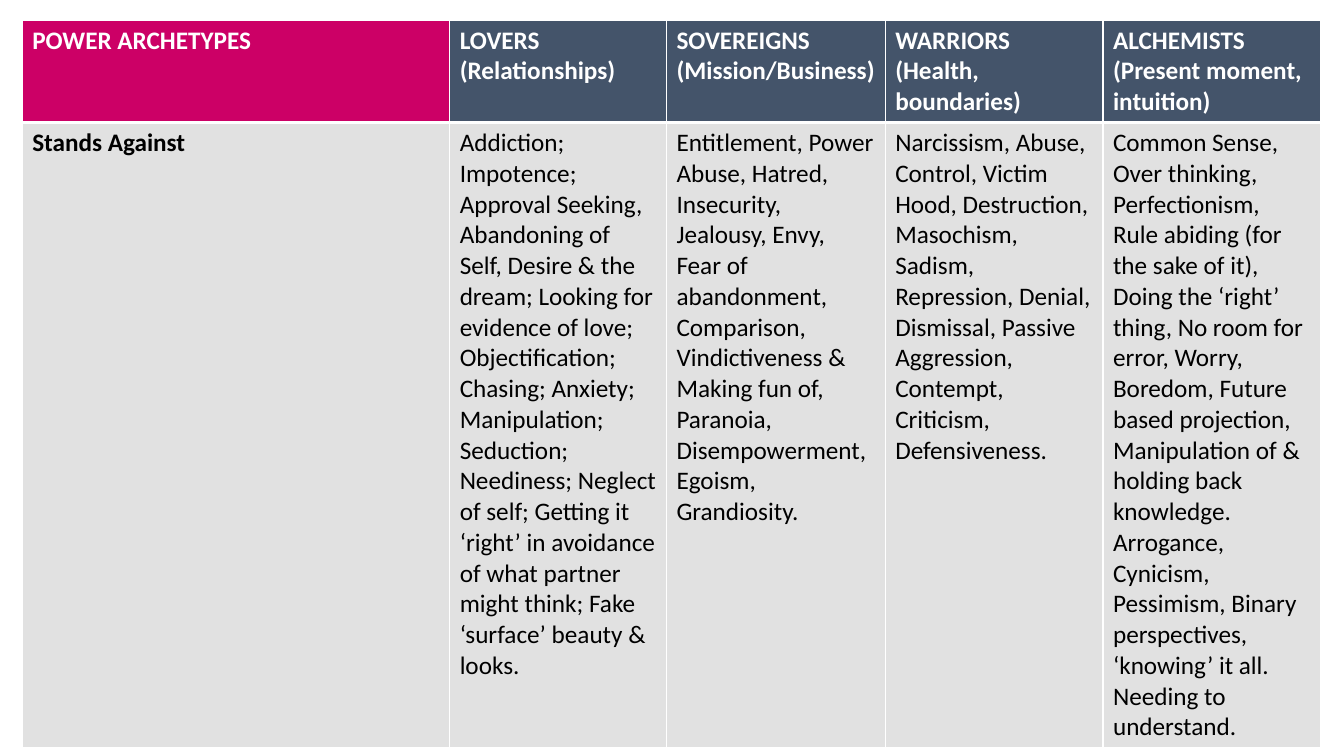
from dataclasses import dataclass

import lxml.etree
import pptx
import pptx.dml.color
import pptx.oxml.ns
import pptx.table
import pptx.util

COLORS = {
    "white": "FFFFFF",
    "black": "000000",
    "magenta": "CC0066",
    "slate": "44546A",
    "grey": "E1E1E1",
}
SIDES = ("L", "R", "T", "B")
ROW_HEIGHTS = (1.0, 6.1)


@dataclass(frozen=True)
class Archetype:
    width: float
    heading: str
    heading_fill: str
    stands_against: tuple[str, ...]
    bold: bool = False


ARCHETYPES = (
    Archetype(4.24, "POWER ARCHETYPES", "magenta", ("Stands Against",), bold=True),
    Archetype(2.15, "LOVERS (Relationships)", "slate", (
        "Addiction; Impotence;",
        "Approval Seeking, Abandoning of Self, Desire & the dream; Looking for "
        "evidence of love; Objectification; Chasing; Anxiety; Manipulation; "
        "Seduction; Neediness; Neglect of self; Getting it ‘right’ in avoidance "
        "of what partner might think; Fake ‘surface’ beauty & looks.",
    )),
    Archetype(2.17, "SOVEREIGNS (Mission/Business)", "slate", (
        "Entitlement, Power Abuse, Hatred, Insecurity, Jealousy, Envy, Fear of "
        "abandonment, Comparison, Vindictiveness & Making fun of, Paranoia,",
        "Disempowerment, Egoism, Grandiosity.",
    )),
    Archetype(2.16, "WARRIORS (Health, boundaries)", "slate", (
        "Narcissism, Abuse, Control, Victim Hood, Destruction, Masochism, Sadism, "
        "Repression, Denial, Dismissal, Passive Aggression, Contempt, Criticism, "
        "Defensiveness.",
    )),
    Archetype(2.16, "ALCHEMISTS (Present moment, intuition)", "slate", (
        "Common Sense, Over thinking, Perfectionism, Rule abiding (for the sake "
        "of it), Doing the ‘right’ thing, No room for error, Worry,  Boredom, "
        "Future based projection, Manipulation of & holding back knowledge. "
        "Arrogance, Cynicism, Pessimism, Binary perspectives, ‘knowing’ it all. "
        "Needing to understand.",
    )),
)


def color(name: str) -> pptx.dml.color.RGBColor:
    return pptx.dml.color.RGBColor.from_string(COLORS[name])


def set_borders(cell: pptx.table._Cell, bottom_width: float) -> None:
    qualify = pptx.oxml.ns.qn
    properties = cell._tc.get_or_add_tcPr()
    for side in SIDES:
        width = bottom_width if side == "B" else 1
        line = lxml.etree.SubElement(
            properties, qualify(f"a:ln{side}"), w=str(pptx.util.Pt(width))
        )
        fill = lxml.etree.SubElement(line, qualify("a:solidFill"))
        lxml.etree.SubElement(fill, qualify("a:srgbClr"), val=COLORS["white"])


def fill_cell(
    cell: pptx.table._Cell,
    paragraphs: tuple[str, ...],
    fill: str,
    text_color: str,
    bold: bool,
    bottom_width: float,
) -> None:
    set_borders(cell, bottom_width)
    cell.fill.solid()
    cell.fill.fore_color.rgb = color(fill)
    cell.text = "\n".join(paragraphs)
    for paragraph in cell.text_frame.paragraphs:
        paragraph.font.name = "Calibri"
        paragraph.font.size = pptx.util.Pt(18)
        paragraph.font.bold = bold
        paragraph.font.color.rgb = color(text_color)


def main() -> None:
    presentation = pptx.Presentation()
    presentation.slide_width = pptx.util.Inches(13.33)
    presentation.slide_height = pptx.util.Inches(7.5)
    slide = presentation.slides.add_slide(presentation.slide_layouts[6])

    table = slide.shapes.add_table(
        len(ROW_HEIGHTS),
        len(ARCHETYPES),
        pptx.util.Inches(0.22),
        pptx.util.Inches(0.2),
        pptx.util.Inches(sum(archetype.width for archetype in ARCHETYPES)),
        pptx.util.Inches(sum(ROW_HEIGHTS)),
    ).table
    table.horz_banding = False
    for row, height in zip(table.rows, ROW_HEIGHTS):
        row.height = pptx.util.Inches(height)

    for index, archetype in enumerate(ARCHETYPES):
        table.columns[index].width = pptx.util.Inches(archetype.width)
        fill_cell(
            table.cell(0, index), (archetype.heading,), archetype.heading_fill,
            "white", bold=True, bottom_width=3,
        )
        fill_cell(
            table.cell(1, index), archetype.stands_against, "grey",
            "black", bold=archetype.bold, bottom_width=1,
        )

    presentation.save("out.pptx")


if __name__ == "__main__":
    main()
